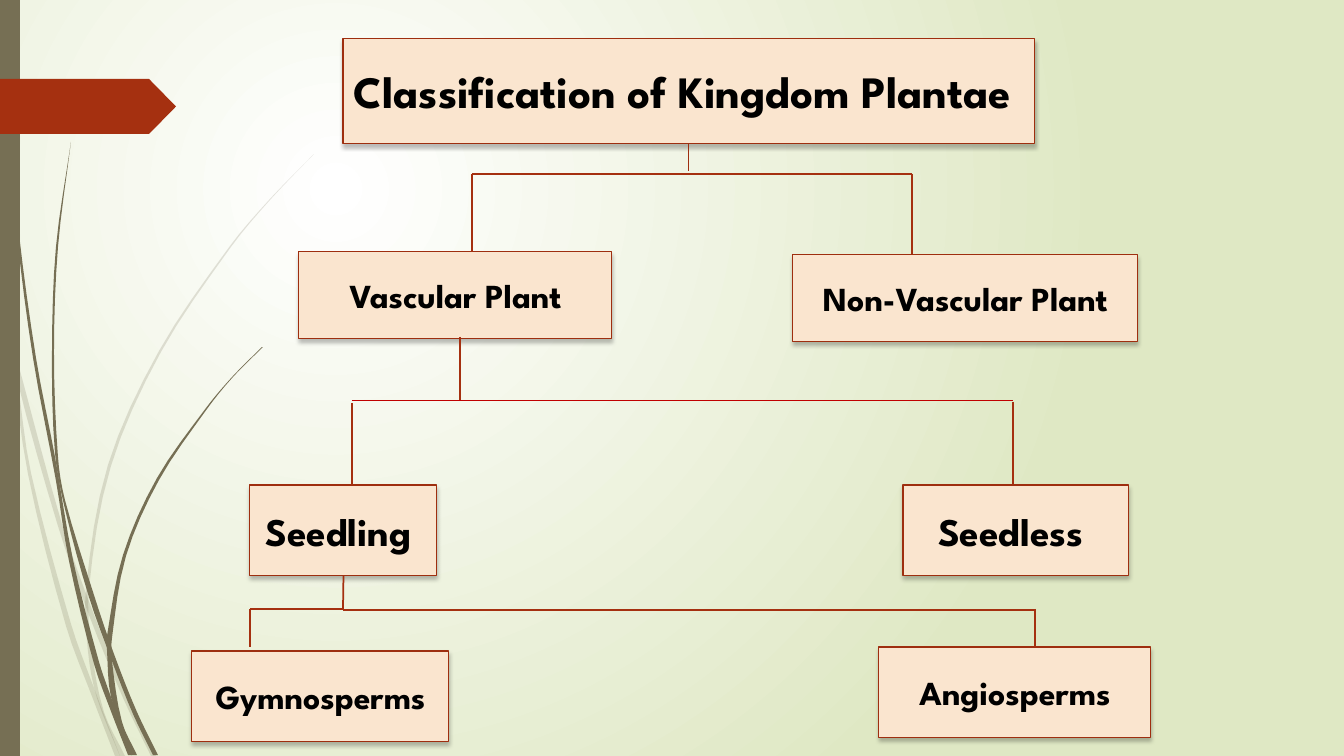
from lxml import etree
from pptx import Presentation
from pptx import util as u
from pptx.dml import color
from pptx.enum import shapes, text
from pptx.oxml import ns

PX = 9525 * 96 / 100.8
OLIVE, RUST, BORDER, PEACH = "766F54", "A53010", "9E2E0F", "FAE5CF"

FAINT_STALKS = [
    ([(14, 348), (62, 524), (93, 612), (128, 698), (156, 756)],
     [(14, 348), (17, 379), (58, 526), (89, 615), (124, 700), (151, 756)]),
    ([(11, 353), (17, 379), (31, 473), (71, 624), (94, 688), (120, 756)],
     [(11, 353), (28, 474), (66, 626), (93, 699), (115, 756)]),
    ([(314, 154), (270, 200), (231, 247), (161, 352), (111, 466), (89, 589), (92, 651), (104, 712), (125, 756)],
     [(314, 154), (270, 199), (230, 246), (159, 351), (108, 465), (86, 589), (88, 651), (97, 698), (120, 756)]),
]
DARK_STALKS = [
    ([(4, 0), (8, 110), (19, 234), (36, 358), (55, 457), (73, 560), (99, 662), (111, 697), (132, 755)],
     [(3, 0), (7, 111), (17, 235), (33, 358), (56, 481), (69, 561), (94, 664), (112, 714), (128, 755)]),
    ([(71, 142), (58, 247), (54, 352), (58, 457), (65, 500), (94, 595), (114, 654), (137, 712), (158, 755)],
     [(71, 142), (56, 247), (52, 352), (55, 453), (65, 509), (89, 597), (112, 661), (133, 714), (153, 755)]),
    ([(263, 347), (233, 377), (207, 409), (159, 480), (126, 556), (112, 638), (112, 661), (122, 722), (137, 755)],
     [(262, 347), (233, 376), (206, 408), (157, 478), (123, 555), (107, 636), (107, 650), (111, 697), (131, 755)]),
]
PLANT_GROUPS = [
    ("Vascular Plant", (299, 252, 313, 87), 24),
    ("Non-Vascular Plant", (793, 255, 345, 87), 24),
    ("Seedling ", (250, 485, 187, 91), 28),
    ("Seedless ", (903, 485, 226, 91), 28),
    ("Gymnosperms", (192, 651, 257, 91), 24),
    ("Angiosperms", (879, 647, 272, 91), 24),
]
BRANCHES = [
    ((689, 174), (912, 174)), ((689, 174), (472, 174)),
    ((472, 174), (472, 252)), ((912, 174), (912, 254)),
    ((460, 337), (460, 401)), ((352, 403), (352, 485)), ((1013, 402), (1013, 484)),
    ((343, 610), (1035, 610)), ((343, 609), (250, 609)),
    ((250, 609), (250, 647)), ((1035, 609), (1035, 647)),
]


def px(*lengths):
    return [u.Emu(round(length * PX)) for length in lengths]


def rgb(hex_code):
    return color.RGBColor.from_string(hex_code)


def paint(shape, fill, line=None, opacity=100):
    shape.fill.solid()
    shape.fill.fore_color.rgb = rgb(fill)
    if opacity < 100:
        tint = shape._element.spPr.find(".//" + ns.qn("a:srgbClr"))
        etree.SubElement(tint, ns.qn("a:alpha"), val=str(opacity * 1000))
    if line:
        shape.line.color.rgb = rgb(line)
        shape.line.width = u.Pt(0.75)
    else:
        shape.line.fill.background()
    shape.shadow.inherit = False


def add_backdrop(page):
    fill = page.background.fill
    fill.gradient()
    for stop, shade in zip(fill.gradient_stops, ("FFFFFF", "DFE8C4")):
        stop.color.rgb = rgb(shade)
    gradient = page.element.find(".//" + ns.qn("a:gradFill"))
    gradient.remove(gradient.find(ns.qn("a:lin")))
    circle = etree.SubElement(gradient, ns.qn("a:path"), {"path": "circle"})
    etree.SubElement(circle, ns.qn("a:fillToRect"), l="50000", t="50000", r="100000", b="100000")


def smooth(edge, steps=4):
    last = len(edge) - 1
    slopes = []
    for i in range(last + 1):
        (x0, y0), (x1, y1) = edge[max(i - 1, 0)], edge[min(i + 1, last)]
        slopes.append((x1 - x0) / (y1 - y0))
    points = [edge[0]]
    for i in range(last):
        (x0, y0), (x1, y1) = edge[i], edge[i + 1]
        rise = y1 - y0
        for step in range(1, steps + 1):
            t = step / steps
            blend = t * t * (3 - 2 * t)
            bend = t * (1 - t) ** 2 * slopes[i] - t * t * (1 - t) * slopes[i + 1]
            points.append((x0 + (x1 - x0) * blend + rise * bend, y0 + rise * t))
    return points


def add_stalk(page, right_edge, left_edge, opacity):
    outline = [px(*point) for point in smooth(right_edge) + smooth(left_edge)[::-1]]
    builder = page.shapes.build_freeform(*outline[0])
    builder.add_line_segments(outline[1:], close=True)
    paint(builder.convert_to_shape(), OLIVE, opacity=opacity)


def add_preset(page, kind, frame, fill):
    shape = page.shapes.add_shape(kind, *px(*frame))
    paint(shape, fill)
    return shape


def style_box(box, label, size):
    paint(box, PEACH, BORDER)
    effects = box._element.spPr.find(ns.qn("a:effectLst"))
    shadow = etree.SubElement(effects, ns.qn("a:outerShdw"), blurRad="38100", dist="25400",
                              dir="5400000", algn="ctr", rotWithShape="0")
    black = etree.SubElement(shadow, ns.qn("a:srgbClr"), val="000000")
    etree.SubElement(black, ns.qn("a:alpha"), val="25000")
    frame = box.text_frame
    frame.text = label
    frame.word_wrap = True
    frame.auto_size = text.MSO_AUTO_SIZE.NONE
    frame.vertical_anchor = text.MSO_ANCHOR.MIDDLE
    para = frame.paragraphs[0]
    para.alignment = text.PP_ALIGN.CENTER
    para.font.name = "League Spartan"
    para.font.size = u.Pt(size)
    para.font.bold = True
    para.font.color.rgb = rgb("000000")


def add_title(page, label, frame, size):
    title = page.shapes.title
    title.left, title.top, title.width, title.height = px(*frame)
    style_box(title, label, size)
    return title


def add_box(page, label, frame, size):
    box = page.shapes.add_shape(shapes.MSO_SHAPE.RECTANGLE, *px(*frame))
    style_box(box, label, size)
    return box


def add_line(page, start, end, shade=RUST, width=1.25, parent=None):
    line = page.shapes.add_connector(shapes.MSO_CONNECTOR.STRAIGHT, *px(*start, *end))
    line.line.color.rgb = rgb(shade)
    line.line.width = u.Pt(width)
    etree.SubElement(line._element.spPr, ns.qn("a:effectLst"))
    if parent is not None:
        line.begin_connect(parent, 2)


def main():
    deck = Presentation()
    deck.slide_width, deck.slide_height = px(1344, 756)
    page = deck.slides.add_slide(deck.slide_layouts[5])
    add_backdrop(page)
    for stalks, opacity in ((FAINT_STALKS, 20), (DARK_STALKS, 100)):
        for right_edge, left_edge in stalks:
            add_stalk(page, right_edge, left_edge, opacity)
    add_preset(page, shapes.MSO_SHAPE.RECTANGLE, (0, 0, 20, 756), OLIVE)
    ribbon = add_preset(page, shapes.MSO_SHAPE.PENTAGON, (0, 79, 176, 55), RUST)
    ribbon.adjustments[0] = 0.49
    kingdom = add_title(page, "Classification of Kingdom Plantae ", (343, 38, 692, 106), 32)
    boxes = {label.strip(): add_box(page, label, frame, size) for label, frame, size in PLANT_GROUPS}
    for start, end in BRANCHES:
        add_line(page, start, end)
    add_line(page, (343, 576), (343, 609), parent=boxes["Seedling"])
    add_line(page, (689, 144), (689, 171), BORDER, 0.75, kingdom)
    add_line(page, (352, 401), (1013, 401), "C00000", 0.75)
    deck.save("out.pptx")


if __name__ == "__main__":
    main()
